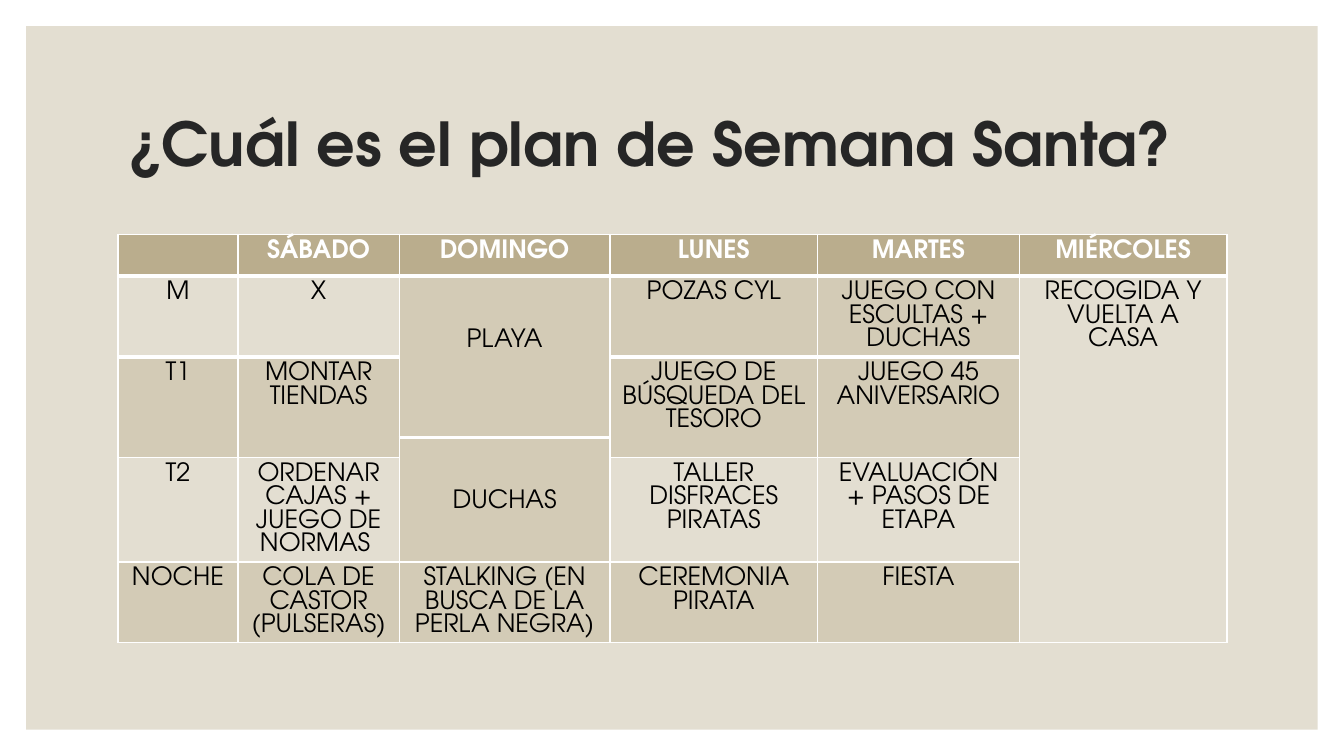
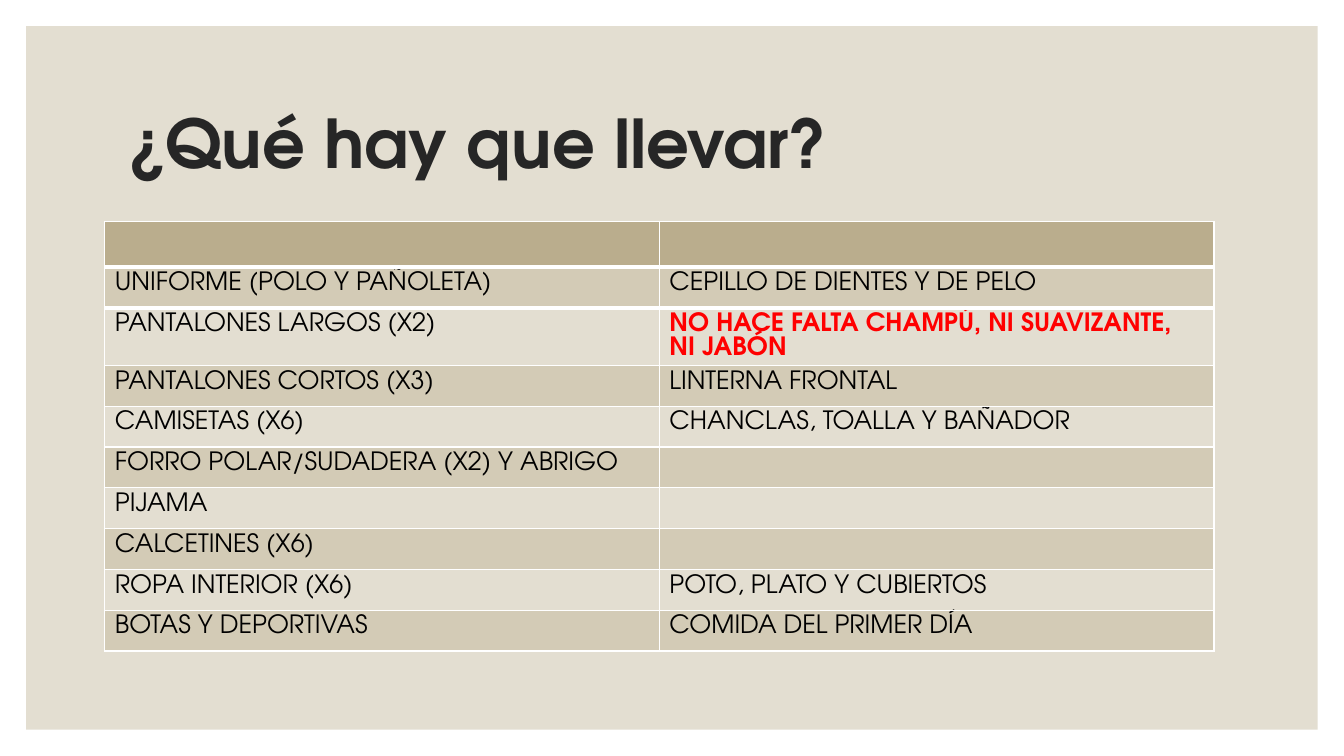
from lxml import etree
from pptx import Presentation
from pptx import util as u
from pptx.dml.color import RGBColor
from pptx.enum import shapes, text
from pptx.oxml import ns

FONT = "TeX Gyre Adventor"
INK = RGBColor(0x26, 0x26, 0x26)
BLACK = RGBColor(0x00, 0x00, 0x00)
WHITE = RGBColor(0xFF, 0xFF, 0xFF)
RED = RGBColor(0xFF, 0x00, 0x00)
HEADER = RGBColor(0xBA, 0xAD, 0x8D)
SAND = RGBColor(0xD3, 0xCB, 0xB6)
LIGHT = RGBColor(0xE3, 0xDE, 0xD1)

FRAME_INSET = 0.26
CONTENT_LEFT = 1.17
CONTENT_WIDTH = 11
LINE_PITCH = u.Pt(16.8)
RULE_WIDTH = u.Pt(3)

presentation = Presentation()
presentation.slide_width = u.Inches(13.33)
presentation.slide_height = u.Inches(7.5)


def add_titled_slide(title, size):
    slide = presentation.slides.add_slide(presentation.slide_layouts[6])
    inset = u.Inches(FRAME_INSET)
    frame = slide.shapes.add_shape(
        shapes.MSO_SHAPE.RECTANGLE, inset, inset,
        presentation.slide_width - 2 * inset, presentation.slide_height - 2 * inset)
    frame.shadow.inherit = False
    frame.fill.solid()
    frame.fill.fore_color.rgb = LIGHT
    frame.line.fill.background()

    box = slide.shapes.add_textbox(
        u.Inches(CONTENT_LEFT), u.Inches(0.71), u.Inches(CONTENT_WIDTH), u.Inches(1.5))
    box.text_frame.word_wrap = True
    box.text_frame.vertical_anchor = text.MSO_ANCHOR.MIDDLE
    paragraph = box.text_frame.paragraphs[0]
    paragraph.line_spacing = 0.9
    run = paragraph.add_run()
    run.text = title
    run.font.name = FONT
    run.font.size = u.Pt(size)
    run.font.bold = True
    run.font.color.rgb = INK
    return slide


def add_grid(slide, left, top, widths, heights, rows, bands, alignment):
    table = slide.shapes.add_table(
        len(rows), len(widths), u.Inches(left), u.Inches(top),
        u.Inches(sum(widths)), u.Inches(sum(heights))).table
    for column, width in zip(table.columns, widths):
        column.width = u.Inches(width)
    for row, height in zip(table.rows, heights):
        row.height = u.Inches(height)
    for r, (words, band) in enumerate(zip(rows, bands)):
        for c, word in enumerate(words):
            cell = table.cell(r, c)
            cell.fill.solid()
            cell.fill.fore_color.rgb = band
            if r < 2:
                rule = etree.Element(ns.qn("a:lnB" if r == 0 else "a:lnT"), w=str(RULE_WIDTH))
                rule_fill = etree.SubElement(rule, ns.qn("a:solidFill"))
                etree.SubElement(rule_fill, ns.qn("a:srgbClr"), val=str(WHITE))
                cell._tc.get_or_add_tcPr().insert(0, rule)
            paragraph = cell.text_frame.paragraphs[0]
            paragraph.line_spacing = LINE_PITCH
            if word:
                paragraph.alignment = alignment
                run = paragraph.add_run()
                run.text = word
                run.font.name = FONT
                run.font.size = u.Pt(18)
                run.font.bold = r == 0
                run.font.color.rgb = WHITE if r == 0 else BLACK
    return table


plan_slide = add_titled_slide("¿Cuál es el plan de Semana Santa?", 43.2)
plan_rows = [
    ["", "SÁBADO", "DOMINGO", "LUNES", "MARTES", "MIÉRCOLES"],
    ["M", "X", "PLAYA", "POZAS CYL", "JUEGO CON ESCULTAS + DUCHAS",
     "RECOGIDA Y VUELTA A CASA"],
    ["T1", "MONTAR TIENDAS", "", "JUEGO DE BÚSQUEDA DEL TESORO",
     "JUEGO 45 ANIVERSARIO", ""],
    ["", "", "DUCHAS", "", "", ""],
    ["T2", "ORDENAR CAJAS + JUEGO DE NORMAS ", "", "TALLER DISFRACES PIRATAS",
     "EVALUACIÓN + PASOS DE ETAPA", ""],
    ["NOCHE", "COLA DE CASTOR (PULSERAS)", "STALKING (EN BUSCA DE LA PERLA NEGRA)",
     "CEREMONIA PIRATA", "FIESTA", ""],
]
plan = add_grid(
    plan_slide, CONTENT_LEFT, 2.33,
    [1.19, 1.6, 2.09, 2.06, 2, 2.06], [0.41, 0.8, 0.8, 0.2, 1.03, 0.8],
    plan_rows, [HEADER, LIGHT, SAND, SAND, LIGHT, SAND], text.PP_ALIGN.CENTER)

for column in (2, 3, 4):
    plan.cell(1, column).fill.fore_color.rgb = SAND
for row in (1, 3):
    plan.cell(row, 2).margin_top = u.Inches(0.52)
    plan.cell(row, 2).merge(plan.cell(row + 1, 2))
for column in (0, 1, 3, 4):
    plan.cell(2, column).merge(plan.cell(3, column))
plan.cell(1, 5).merge(plan.cell(5, 5))

packing_slide = add_titled_slide("¿Qué hay que llevar?", 48)
packing_rows = [
    ["", ""],
    ["UNIFORME (POLO Y PAÑOLETA)", "CEPILLO DE DIENTES Y DE PELO"],
    ["PANTALONES LARGOS (X2)", "NO HACE FALTA CHAMPÚ, NI SUAVIZANTE, NI JABÓN"],
    ["PANTALONES CORTOS (X3)", "LINTERNA FRONTAL"],
    ["CAMISETAS (X6)", "CHANCLAS, TOALLA Y BAÑADOR"],
    ["FORRO POLAR/SUDADERA (X2) Y ABRIGO", ""],
    ["PIJAMA", ""],
    ["CALCETINES (X6)", ""],
    ["ROPA INTERIOR (X6)", "POTO, PLATO Y CUBIERTOS"],
    ["BOTAS Y DEPORTIVAS", "COMIDA DEL PRIMER DÍA"],
]
header_height, warning_height = 0.45, 0.57
item_height = (4.26 - header_height - warning_height) / 8
packing = add_grid(
    packing_slide, 1.04, 2.2, [CONTENT_WIDTH / 2] * 2,
    [header_height, item_height, warning_height] + [item_height] * 7,
    packing_rows, [HEADER] + [SAND, LIGHT] * 4 + [SAND], text.PP_ALIGN.LEFT)

warning = packing.cell(2, 1).text_frame.paragraphs[0].runs[0]
warning.font.bold = True
warning.font.color.rgb = RED

presentation.save("out.pptx")
